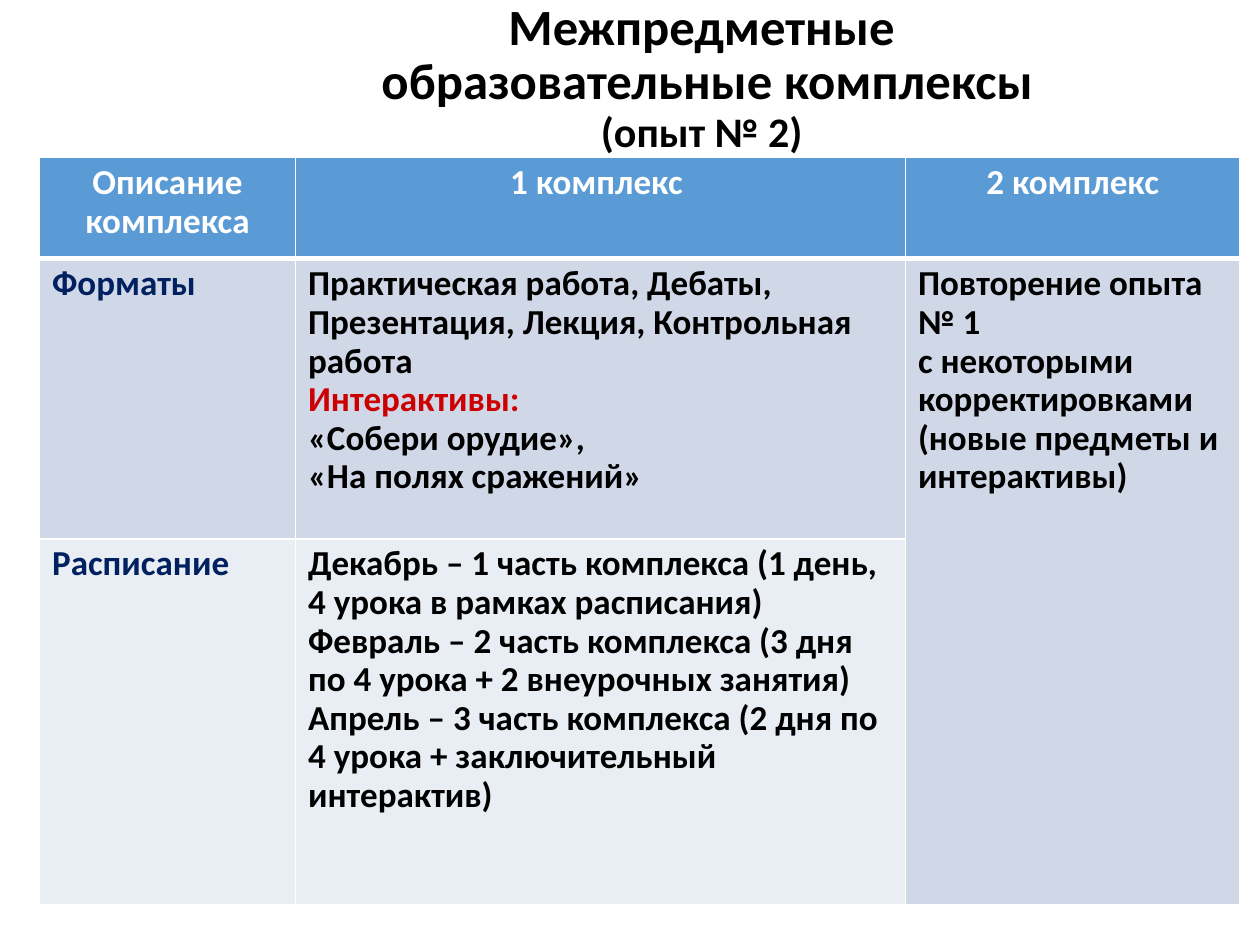
from pptx import Presentation
from pptx.dml.color import RGBColor
from pptx.enum.text import MSO_ANCHOR, PP_ALIGN as Align
from pptx.oxml.ns import qn
from pptx.util import Pt
from lxml.etree import SubElement

WHITE, BLACK, NAVY, RED = "FFFFFF", "000000", "002060", "CC0000"
HEADER, BAND_DARK, BAND_LIGHT = "5B9BD5", "D0D8E8", "E9EDF4"


def color(value):
    return RGBColor.from_string(value)


def style(font, size, hex_color):
    values = {"name": "Calibri", "size": Pt(size), "bold": True}
    for name, value in values.items():
        setattr(font, name, value)
    font.color.rgb = color(hex_color)


deck = Presentation()
deck.slide_width, deck.slide_height = Pt(720), Pt(540)
page = deck.slides.add_slide(deck.slide_layouts[6])

# Title
title = page.shapes.add_textbox(Pt(90.7), Pt(8.6), Pt(620.6), Pt(72.7))
title.text_frame.word_wrap = True
title.text_frame.vertical_anchor = MSO_ANCHOR.MIDDLE
para = title.text_frame.paragraphs[0]
para.alignment, para.line_spacing = Align.CENTER, 0.9
title_lines = [("Межпредметные", 29), (" образовательные комплексы", 29), ("(опыт № 2)", 24)]
for index, (text, size) in enumerate(title_lines):
    if index:
        para.add_line_break()
    span = para.add_run()
    span.text = text
    style(span.font, size, BLACK)

# Table: each cell is a list of (paragraph text, colour)
rows = [
    [
        [("Описание комплекса", WHITE)],
        [("1 комплекс ", WHITE)],
        [(" 2 комплекс ", WHITE)],
    ],
    [
        [("Форматы", NAVY)],
        [
            ("Практическая работа, Дебаты, Презентация, Лекция, Контрольная работа", BLACK),
            ("Интерактивы:", RED),
            ("«Собери орудие»,", BLACK),
            ("«На полях сражений»", BLACK),
        ],
        [
            ("Повторение опыта", BLACK),
            ("№ 1", BLACK),
            ("с некоторыми корректировками (новые предметы и интерактивы)", BLACK),
        ],
    ],
    [
        [("Расписание", NAVY)],
        [
            ("Декабрь – 1 часть комплекса (1 день, 4 урока в рамках расписания)", BLACK),
            ("Февраль – 2 часть комплекса (3 дня по 4 урока + 2 внеурочных занятия)", BLACK),
            ("Апрель – 3 часть комплекса (2 дня по 4 урока + заключительный интерактив)", BLACK),
        ],
        [],
    ],
]
column_widths = [146.3, 348.5, 191.3]
row_heights = [57.9, 160, 209.2]
row_fills = [HEADER, BAND_DARK, BAND_LIGHT]

table = page.shapes.add_table(
    3, 3, Pt(22.6), Pt(90), Pt(sum(column_widths)), Pt(sum(row_heights))
).table
for column, width in zip(table.columns, column_widths):
    column.width = Pt(width)
for row, height in zip(table.rows, row_heights):
    row.height = Pt(height)
table.cell(1, 2).merge(table.cell(2, 2))

for row_index, row in enumerate(rows):
    for column_index, lines in enumerate(row):
        cell = table.cell(row_index, column_index)
        # The rule below the header is thicker than the others
        borders = {
            "lnL": 1,
            "lnR": 1,
            "lnT": 3 if row_index == 1 else 1,
            "lnB": 3 if row_index == 0 else 1,
        }
        properties = cell._tc.get_or_add_tcPr()
        for tag, width in borders.items():
            line = SubElement(properties, qn(f"a:{tag}"), w=str(Pt(width)))
            fill = SubElement(line, qn("a:solidFill"))
            SubElement(fill, qn("a:srgbClr"), val=WHITE)
        cell.fill.solid()
        cell.fill.fore_color.rgb = color(BAND_DARK if cell.is_spanned else row_fills[row_index])
        for index, (text, hex_color) in enumerate(lines):
            frame = cell.text_frame
            para = frame.add_paragraph() if index else frame.paragraphs[0]
            para.alignment = Align.LEFT if row_index else Align.CENTER
            para.line_spacing = 0.9
            span = para.add_run()
            span.text = text
            style(span.font, 20, hex_color)

deck.save("out.pptx")
